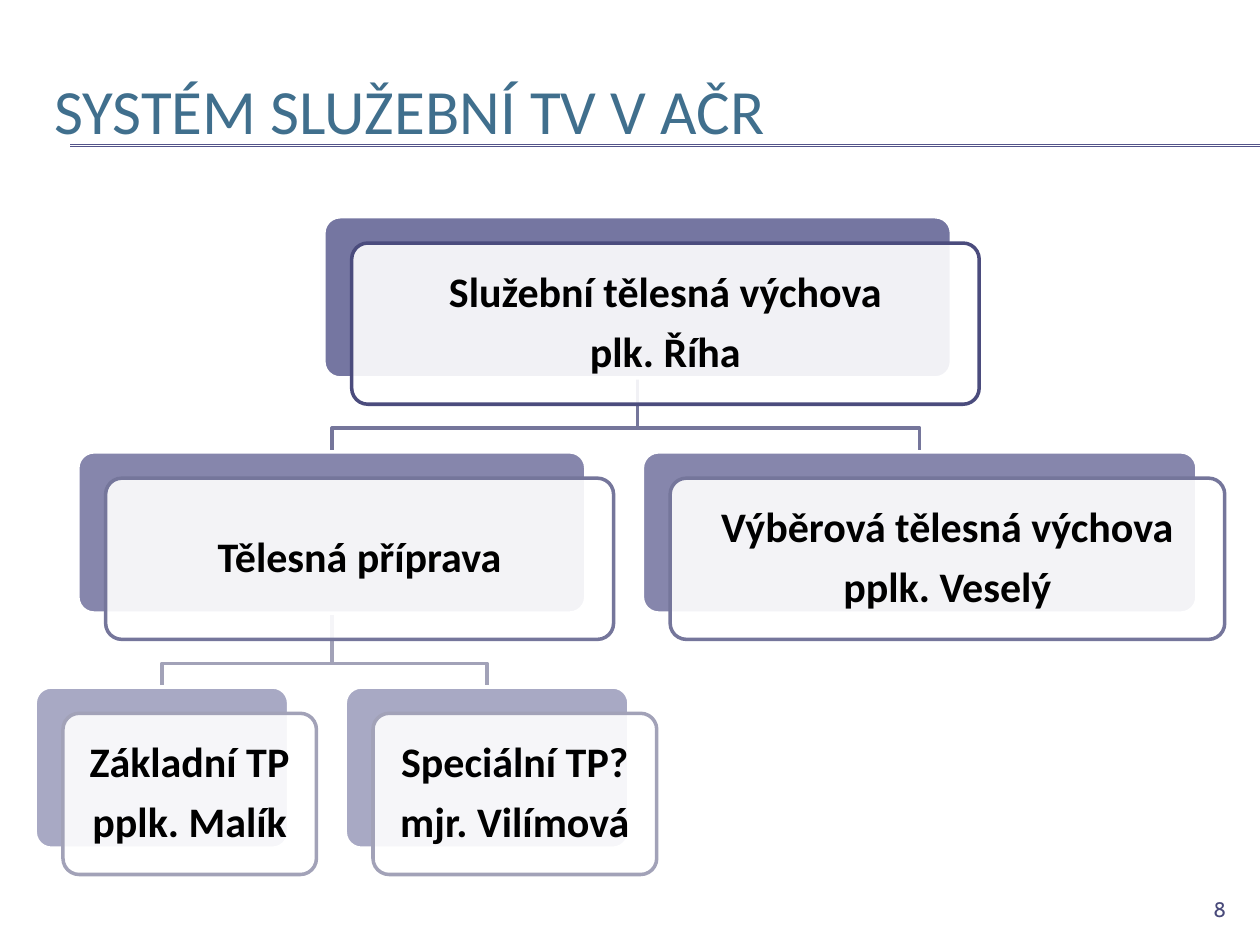
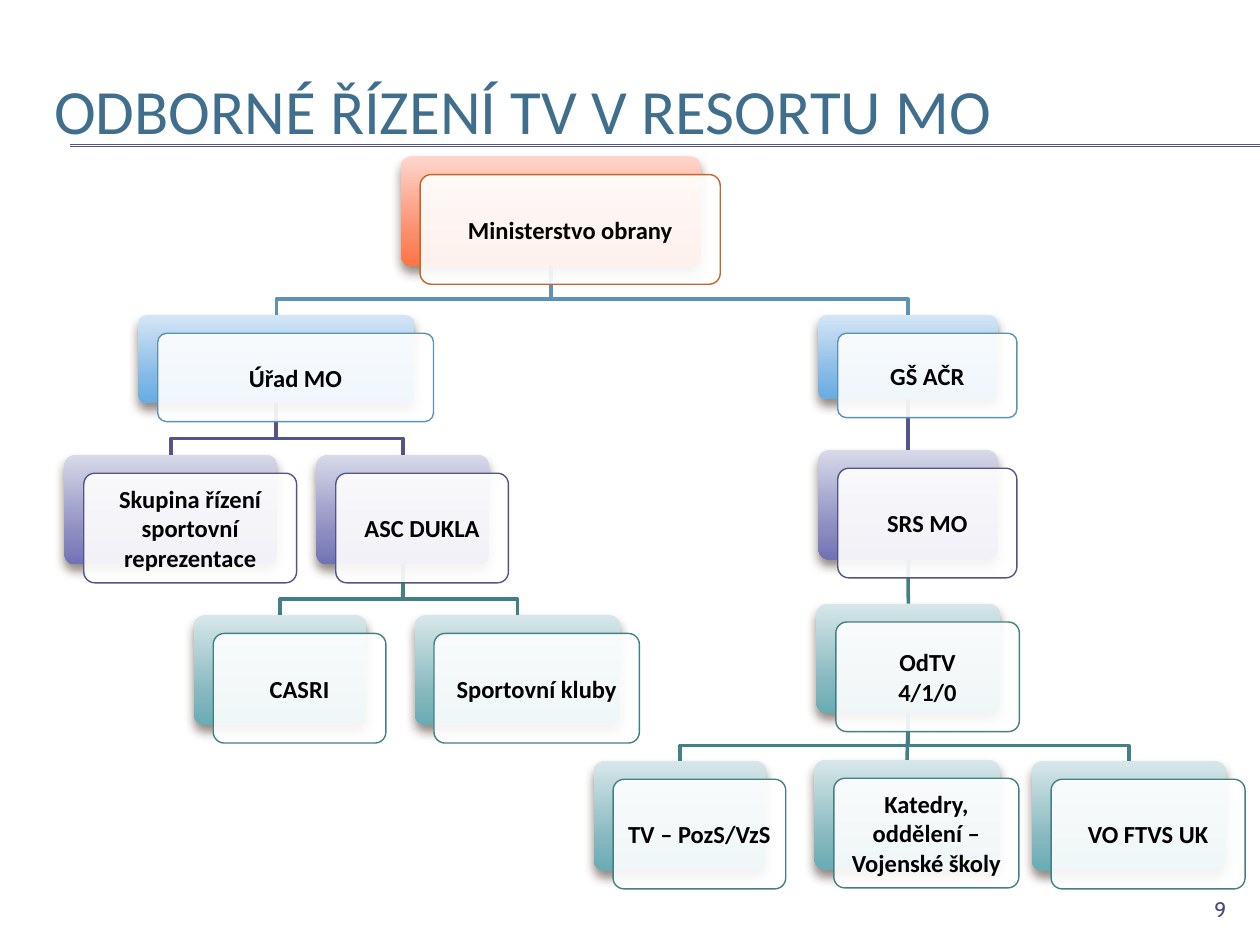
from dataclasses import dataclass

from lxml import etree
from pptx import Presentation
from pptx.dml.color import RGBColor
from pptx.enum.shapes import MSO_CONNECTOR as Connector, MSO_SHAPE as Shape
from pptx.enum.text import MSO_ANCHOR as Anchor, PP_ALIGN as Align
from pptx.oxml import parse_xml
from pptx.oxml.ns import nsdecls, qn
from pptx.util import Cm, Pt


@dataclass(frozen=True)
class Theme:
    font: str = "Calibri"
    number_font: str = "Cabin"
    title_size: float = 36
    number_size: float = 12
    line_width: float = 2
    rule_width: float = 0.75
    corner: float = 0.1
    elbow: float = 0.68  # share of the gap above the bend
    title: str = "406F8D"
    number: str = "494A7A"
    accent: str = "53548A"
    white: str = "FFFFFF"
    black: str = "000000"
    shadow: str = "4E3B30"


@dataclass(frozen=True)
class Level:
    outline: str
    opacity: int = 100
    stops: tuple = ()  # gradient colours; empty means accent fill


@dataclass(frozen=True)
class ChartStyle:
    shift: tuple  # panel offset from its back card
    text_size: float
    inset: float
    panel_line: float
    line_spacing: float = 1
    space_after: float = 0


@dataclass(frozen=True)
class Node:
    text: str
    level: Level
    left: float
    top: float
    width: float
    height: float
    parent: str = ""

    @property
    def middle(self):
        return self.left + self.width / 2

    @property
    def bottom(self):
        return self.top + self.height


THEME = Theme()
LARGE = ChartStyle((0.56, 0.53), 24, 0.25, 2, 0.9, 8.4)
SMALL = ChartStyle((0.39, 0.37), 14, 0.15, 0.79)

# Levels of the two charts
TOP, BRANCH, LEAF = Level("4B4C7D", 80), Level("75769B", 70), Level("A2A2B8", 50)
ORANGE = Level("C4652D", stops=("FED6CC", "FB8B68", "FF7444"))
BLUE = Level("5C92B5", stops=("D4E6F6", "82B8E5", "66ADE3"))
VIOLET = Level("53548A", stops=("D8D9E9", "8B8CBF", "7172B5"))
TEAL = Level("438086", stops=("D7E7E9", "85B7BE", "68ACB4"))


def service_nodes():
    height, step = 3.25, 4.74
    rows = [step * row for row in range(3)]
    return {
        "service": Node("Služební tělesná výchova\nplk. Říha", TOP, 5.82, rows[0], 12.65, height),
        "training": Node("Tělesná příprava", BRANCH, 0.86, rows[1], 10.24, height, "service"),
        "basic": Node("Základní TP\npplk. Malík", LEAF, 0, rows[2], 5.11, height, "training"),
        "special": Node("Speciální TP?\nmjr. Vilímová", LEAF, 6.25, rows[2], 5.72, height, "training"),
        "selective": Node("Výběrová tělesná výchova\npplk. Veselý", BRANCH, 12.24, rows[1], 11.18,
                          height, "service"),
    }


def ministry_nodes():
    height = 2.21
    return {
        "ministry": Node("Ministerstvo obrany", ORANGE, 6.78, 0, 6.05, height),
        "office": Node("Úřad MO", BLUE, 1.49, 3.2, 5.56, 1.78, "ministry"),
        "sport": Node("Skupina řízení\nsportovní reprezentace", VIOLET, 0, 6.02, 4.29, height, "office"),
        "dukla": Node("ASC DUKLA", VIOLET, 5.08, 6.02, 3.48, height, "office"),
        "casri": Node("CASRI", TEAL, 2.61, 9.25, 3.48, height, "dukla"),
        "clubs": Node("Sportovní kluby", TEAL, 7.06, 9.25, 4.14, height, "dukla"),
        "staff": Node("GŠ AČR", BLUE, 15.2, 3.2, 3.61, 1.7, "ministry"),
        "srs": Node("SRS MO", VIOLET, 15.2, 5.92, 3.61, height, "staff"),
        "odtv": Node("OdTV\n4/1/0", TEAL, 15.16, 9.02, 3.7, height, "srs"),
        "units": Node("TV – PozS/VzS", TEAL, 10.67, 12.19, 3.48, height, "odtv"),
        "schools": Node("Katedry, oddělení –\nVojenské školy", TEAL, 15.12, 12.17, 3.73, height, "odtv"),
        "faculty": Node("VO FTVS UK", TEAL, 19.5, 12.19, 3.91, height, "odtv"),
    }


def color(value):
    return RGBColor.from_string(value)


def set_line(line, value, width):
    line.color.rgb = color(value)
    line.width = Pt(width)


def set_fill(shape, value, opacity):
    shape.fill.solid()
    shape.fill.fore_color.rgb = color(value)
    swatch = shape._element.spPr.find(f"{qn('a:solidFill')}/{qn('a:srgbClr')}")
    etree.SubElement(swatch, qn("a:alpha"), val=str(opacity * 1000))


def set_gradient(shape, colors):
    stops = "".join(
        f'<a:gs pos="{position * 1000}"><a:srgbClr val="{value}"/></a:gs>'
        for position, value in zip((0, 72, 100), colors))
    gradient = parse_xml(f'<a:gradFill {nsdecls("a")} rotWithShape="1"><a:gsLst>{stops}</a:gsLst>'
                         '<a:lin ang="5400000" scaled="0"/></a:gradFill>')
    shape._element.spPr.find(qn("a:prstGeom")).addnext(gradient)


def add_shadow(shape):
    effects = shape._element.spPr.find(qn("a:effectLst"))
    effects.append(parse_xml(
        f'<a:outerShdw {nsdecls("a")} blurRad="{Pt(6)}" dist="{Pt(4)}" dir="5400000" rotWithShape="0">'
        f'<a:srgbClr val="{THEME.shadow}"><a:alpha val="60000"/></a:srgbClr></a:outerShdw>'))


def write(text_frame, text, size, value, align, font=THEME.font, bold=False):
    text_frame.word_wrap = True
    text_frame.text = text
    for paragraph in text_frame.paragraphs:
        paragraph.alignment = align
        for run in paragraph.runs:
            run.font.name = font
            run.font.size = Pt(size)
            run.font.bold = bold
            run.font.color.rgb = color(value)


def add_straight(slide, left, top, right, bottom, value, width):
    connector = slide.shapes.add_connector(Connector.STRAIGHT, Cm(left), Cm(top), Cm(right), Cm(bottom))
    set_line(connector.line, value, width)
    etree.SubElement(connector._element.spPr, qn("a:effectLst"))
    return connector


def add_frame(slide, title, number):
    # Double rule under the title
    for height in (2.92, 2.95):
        add_straight(slide, 1.42, height, 25.4, height, THEME.accent, THEME.rule_width)

    # Title
    text_frame = slide.shapes.add_textbox(Cm(0.84), Cm(1.27), Cm(24.13), Cm(1.65)).text_frame
    text_frame.margin_top, text_frame.margin_bottom = Cm(0.18), 0
    write(text_frame, title, THEME.title_size, THEME.title, Align.LEFT)

    # Slide number
    text_frame = slide.shapes.add_textbox(Cm(22.86), Cm(17.98), Cm(2.11), Cm(0.69)).text_frame
    text_frame.vertical_anchor = Anchor.MIDDLE
    write(text_frame, str(number), THEME.number_size, THEME.number, Align.RIGHT, THEME.number_font)


def add_elbow(slide, left, top, parent, child):
    bend = parent.bottom + THEME.elbow * (child.top - parent.bottom)
    points = [(Cm(left + x), Cm(top + y)) for x, y in (
        (parent.middle, parent.bottom), (parent.middle, bend),
        (child.middle, bend), (child.middle, child.top))]
    builder = slide.shapes.build_freeform(*points[0])
    builder.add_line_segments(points[1:], close=False)
    elbow = builder.convert_to_shape()
    elbow.shadow.inherit = False
    elbow.fill.background()
    set_line(elbow.line, child.level.outline, THEME.line_width)


def add_card(slide, left, top, node):
    card = slide.shapes.add_shape(Shape.ROUNDED_RECTANGLE, Cm(left + node.left), Cm(top + node.top),
                                  Cm(node.width), Cm(node.height))
    card.adjustments[0] = THEME.corner
    card.shadow.inherit = False
    return card


def add_back(slide, left, top, node):
    back = add_card(slide, left, top, node)
    if node.level.stops:
        set_gradient(back, node.level.stops)
        back.line.fill.background()
        add_shadow(back)
    else:
        set_fill(back, THEME.accent, node.level.opacity)
        set_line(back.line, THEME.white, THEME.line_width)
    return back


def add_panel(slide, left, top, node, style):
    panel = add_card(slide, left + style.shift[0], top + style.shift[1], node)
    set_fill(panel, THEME.white, 90)
    set_line(panel.line, node.level.outline, style.panel_line)
    text_frame = panel.text_frame
    text_frame.vertical_anchor = Anchor.MIDDLE
    text_frame.margin_left = text_frame.margin_right = Cm(style.inset)
    text_frame.margin_top = text_frame.margin_bottom = Cm(style.inset)
    write(text_frame, node.text, style.text_size, THEME.black, Align.CENTER, bold=True)
    for paragraph in text_frame.paragraphs:
        paragraph.line_spacing = style.line_spacing
        paragraph.space_after = Pt(style.space_after)


def add_hierarchy(slide, left, top, nodes, style):
    # Bent links lie behind the cards
    straight = []
    for name, node in nodes.items():
        if not node.parent:
            continue
        parent = nodes[node.parent]
        if abs(parent.middle - node.middle) < 0.05:
            straight.append(name)
        else:
            add_elbow(slide, left, top, parent, node)

    # Back cards
    backs = {name: add_back(slide, left, top, node) for name, node in nodes.items()}

    # Straight links join the cards
    for name in straight:
        node = nodes[name]
        parent = nodes[node.parent]
        link = add_straight(slide, left + parent.middle, top + parent.bottom, left + node.middle,
                            top + node.top, node.level.outline, THEME.line_width)
        link.begin_connect(backs[node.parent], 2)
        link.end_connect(backs[name], 0)

    # Front panels with text
    for node in nodes.values():
        add_panel(slide, left, top, node, style)


def main():
    presentation = Presentation()
    presentation.slide_width, presentation.slide_height = Cm(25.4), Cm(19.05)
    pages = (
        ("SYSTÉM SLUŽEBNÍ TV V AČR", 0.71, 4.37, service_nodes(), LARGE),
        ("ODBORNÉ ŘÍZENÍ TV V RESORTU MO", 1.3, 3.15, ministry_nodes(), SMALL),
    )
    for number, (title, left, top, nodes, style) in enumerate(pages, start=8):
        slide = presentation.slides.add_slide(presentation.slide_layouts[6])
        add_frame(slide, title, number)
        add_hierarchy(slide, left, top, nodes, style)
    presentation.save("out.pptx")


if __name__ == "__main__":
    main()
